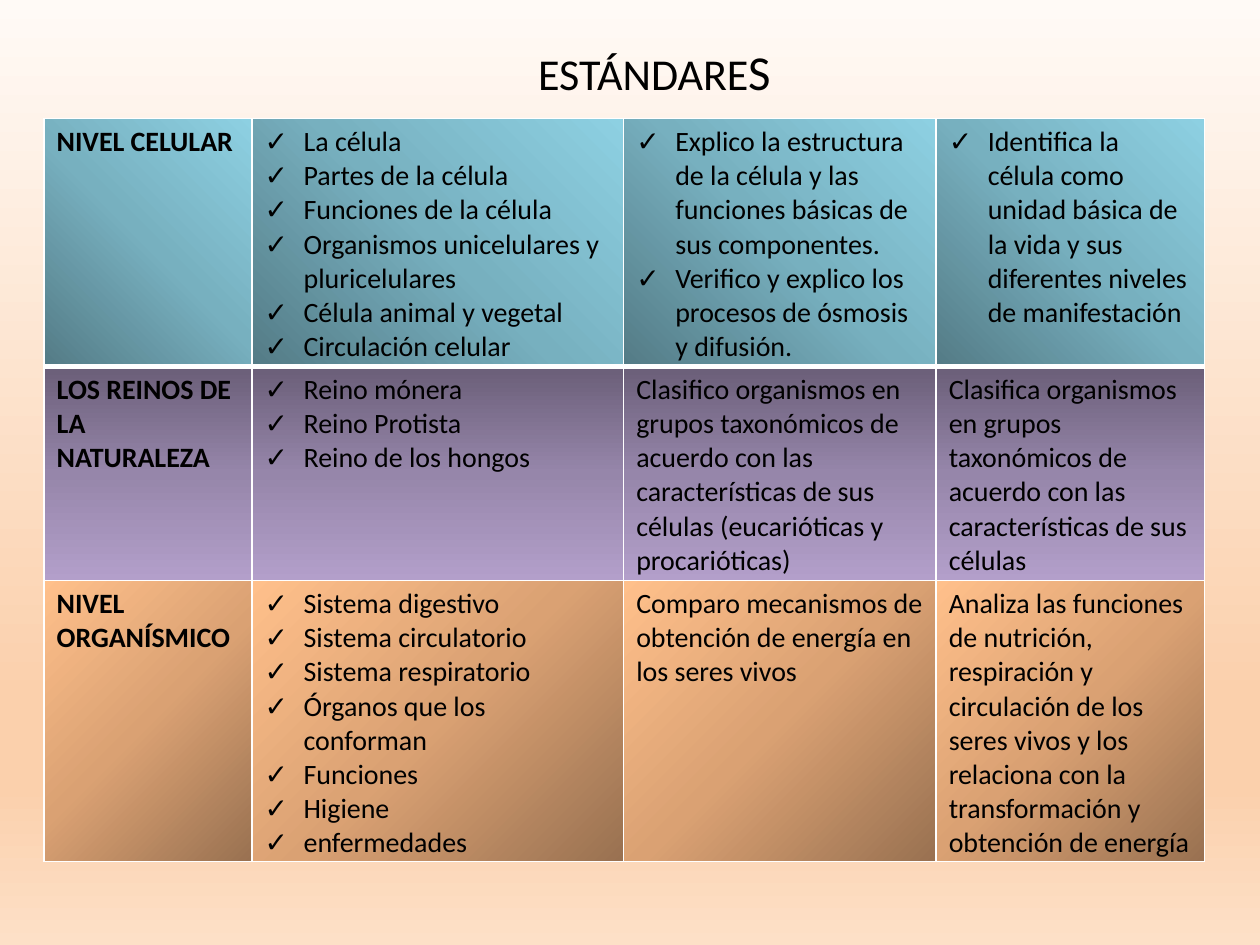
from dataclasses import dataclass

from pptx import Presentation
from pptx.dml.color import RGBColor as Rgb
from pptx.enum.text import MSO_ANCHOR as Anchor, PP_ALIGN as Align
from pptx.oxml import parse_xml
from pptx.oxml.ns import nsdecls, qn
from pptx.util import Inches, Pt


@dataclass(frozen=True)
class Theme:
    font: str = "Calibri"
    ink: str = "000000"
    border: str = "FFFFFF"
    title_size: float = 25.2
    title_end_size: float = 27.9
    body_size: float = 16
    thin: float = 1
    thick: float = 3
    backdrop: tuple = ((0, "FFFAF6"), (74, "FBD0AC"), (83, "FBD0AC"), (100, "FDE0C7"))
    teal: tuple = ((0, "547B86"), (50, "77B0BF"), (100, "8DD0E2"))
    violet: tuple = ((0, "6A5E78"), (50, "9686AA"), (100, "B39FCA"))
    orange: tuple = ((0, "997151"), (50, "DAA173"), (100, "FFC08B"))


THEME = Theme()
DOWNWARD = '<a:lin ang="5400000" scaled="0"/>'
CORNER = '<a:path path="circle"><a:fillToRect {}/></a:path>'
FROM_BOTTOM_LEFT = CORNER.format('t="100000" r="100000"')
FROM_BOTTOM_RIGHT = CORNER.format('l="100000" t="100000"')

COLUMN_WIDTHS = (1.65, 2.95, 2.48, 2.13)

# Row height, gradient stops, gradient direction, cells; a list is a checklist
ROWS = (
    (1.95, THEME.teal, FROM_BOTTOM_LEFT, (
        "NIVEL CELULAR",
        ["La célula", "Partes de la célula", "Funciones de la célula",
         "Organismos unicelulares y pluricelulares",
         "Célula animal y vegetal", "Circulación celular"],
        ["Explico la estructura de la célula y las funciones básicas de sus componentes.",
         "Verifico y explico los procesos de ósmosis y difusión."],
        ["Identifica la célula como unidad básica de la vida y sus diferentes "
         "niveles de manifestación"],
    )),
    (1.7, THEME.violet, DOWNWARD, (
        "LOS REINOS DE LA NATURALEZA",
        ["Reino mónera", "Reino Protista", "Reino de los hongos"],
        "Clasifico organismos en grupos taxonómicos de acuerdo con las "
        "características de sus células (eucarióticas y procarióticas)",
        "Clasifica organismos en grupos taxonómicos de acuerdo con las "
        "características de sus células",
    )),
    (2.2, THEME.orange, FROM_BOTTOM_RIGHT, (
        "NIVEL ORGANÍSMICO",
        ["Sistema digestivo", "Sistema circulatorio", "Sistema respiratorio",
         "Órganos que los conforman", "Funciones", "Higiene", "enfermedades"],
        "Comparo mecanismos de obtención de energía en los seres vivos",
        "Analiza las funciones de nutrición, respiración y circulación de los "
        "seres vivos y los relaciona con la transformación y obtención de energía",
    )),
)


def gradient(stops, direction):
    marks = "".join(
        f'<a:gs pos="{position * 1000}"><a:srgbClr val="{color}"/></a:gs>'
        for position, color in stops)
    return parse_xml(f'<a:gradFill {nsdecls("a")} rotWithShape="1">'
                     f'<a:gsLst>{marks}</a:gsLst>{direction}</a:gradFill>')


def set_background(page):
    fill = page.background.fill
    fill.solid()
    solid = next(page.element.iter(qn("a:solidFill")))
    solid.getparent().replace(solid, gradient(THEME.backdrop, DOWNWARD))


def style_font(font, size, bold=False):
    font.name = THEME.font
    font.size = Pt(size)
    font.bold = bold
    font.color.rgb = Rgb.from_string(THEME.ink)


def add_title(page):
    box = page.shapes.add_textbox(Inches(3.58), Inches(0.29), Inches(3.23), Inches(0.54))
    frame = box.text_frame
    frame.word_wrap = True
    frame.vertical_anchor = Anchor.MIDDLE
    para = frame.paragraphs[0]
    para.alignment = Align.CENTER
    for text, size in (("ESTÁNDARE", THEME.title_size), ("S", THEME.title_end_size)):
        span = para.add_run()
        span.text = text
        style_font(span.font, size)


def add_check(para):
    props = para._p.get_or_add_pPr()
    props.set("marL", str(Inches(0.31)))
    props.set("indent", str(Inches(-0.31)))
    props.append(parse_xml(f'<a:buFont {nsdecls("a")} typeface="Arial"/>'))
    props.append(parse_xml(f'<a:buChar {nsdecls("a")} char="✓"/>'))


def fill_text(cell, content, bold):
    checklist = isinstance(content, list)
    frame = cell.text_frame
    frame.text = "\n".join(content) if checklist else content
    for para in frame.paragraphs:
        if checklist:
            add_check(para)
        style_font(para.font, THEME.body_size, bold)


def paint_cell(cell, stops, direction, top, bottom):
    props = cell._tc.get_or_add_tcPr()
    for side, width in (("L", THEME.thin), ("R", THEME.thin), ("T", top), ("B", bottom)):
        props.append(parse_xml(
            f'<a:ln{side} {nsdecls("a")} w="{Pt(width)}"><a:solidFill>'
            f'<a:srgbClr val="{THEME.border}"/></a:solidFill></a:ln{side}>'))
    props.append(gradient(stops, direction))


def add_standards_table(page):
    table = page.shapes.add_table(
        len(ROWS), len(COLUMN_WIDTHS), Inches(0.35), Inches(0.94),
        Inches(sum(COLUMN_WIDTHS)), Inches(sum(row[0] for row in ROWS))).table
    table.first_row = table.horz_banding = False
    for column, width in zip(table.columns, COLUMN_WIDTHS):
        column.width = Inches(width)
    for r, (height, stops, direction, contents) in enumerate(ROWS):
        table.rows[r].height = Inches(height)
        # A thick rule parts the first row from the second
        top = THEME.thick if r == 1 else THEME.thin
        bottom = THEME.thick if r == 0 else THEME.thin
        for c, content in enumerate(contents):
            cell = table.cell(r, c)
            fill_text(cell, content, bold=c == 0)
            paint_cell(cell, stops, direction, top, bottom)


def main():
    deck = Presentation()
    deck.slide_width, deck.slide_height = Inches(10), Inches(7.5)
    page = deck.slides.add_slide(deck.slide_layouts[6])
    set_background(page)
    add_title(page)
    add_standards_table(page)
    deck.save("out.pptx")


if __name__ == "__main__":
    main()
